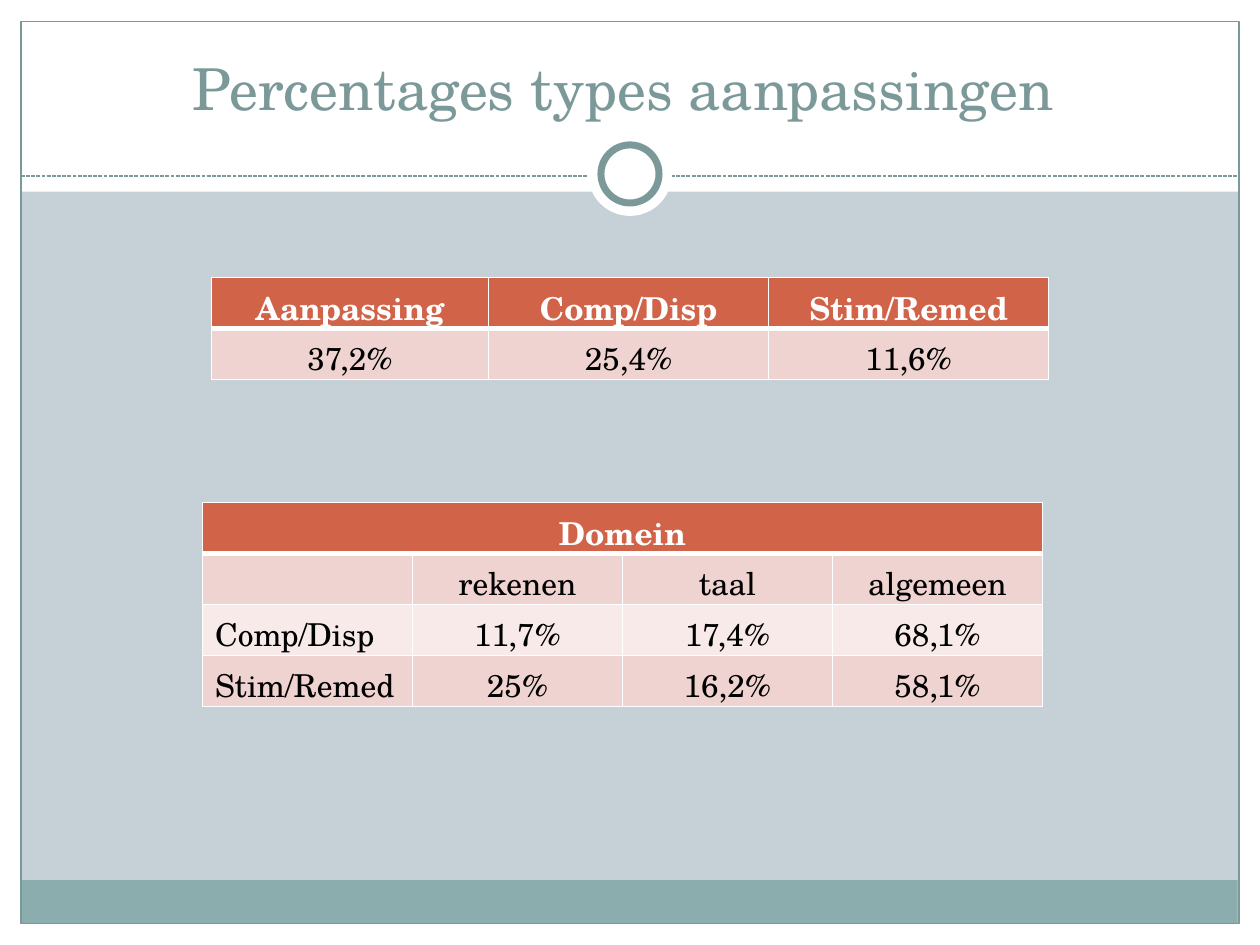
from lxml.etree import SubElement
from pptx import Presentation
from pptx.dml.color import RGBColor
from pptx.enum.dml import MSO_LINE
from pptx.enum.shapes import MSO_CONNECTOR, MSO_SHAPE
from pptx.enum.text import MSO_ANCHOR, PP_ALIGN
from pptx.oxml.ns import qn
from pptx.util import Pt

HUES = {"white": "FFFFFF", "teal": "7C999A", "bar": "8CADAE", "back": "C5D1D7",
        "head": "D16349", "rose": "EED3D0", "pale": "F7EAE9", "black": "000000"}
RGB = {name: RGBColor.from_string(code) for name, code in HUES.items()}
FACE = "TeX Gyre Schola"
FONTS = {"title": {"name": FACE, "size": Pt(33), "bold": False},
         "head": {"name": FACE, "size": Pt(18), "bold": True},
         "body": {"name": FACE, "size": Pt(18), "bold": False}}


def put_text(para, text, kind, hue, align=PP_ALIGN.CENTER):
    para.alignment = align
    run = para.add_run()
    run.text = text
    for key, value in FONTS[kind].items():
        setattr(run.font, key, value)
    run.font.color.rgb = RGB[hue]


def put_table(left, top, widths, rows):
    size = len(rows), len(widths)
    high = 29.2
    table = slide.shapes.add_table(*size, Pt(left), Pt(top), Pt(sum(widths)),
                                   Pt(high * len(rows))).table
    table.first_row = table.horz_banding = False
    for col, width in zip(table.columns, widths):
        col.width = Pt(width)
    for r, row in enumerate(rows):
        table.rows[r].height = Pt(high)
        kind, ink = ("body", "black") if r else ("head", "white")
        hue = "head" if r == 0 else "rose" if r % 2 else "pale"
        for c in range(len(widths)):
            cell = table.cell(r, c)
            cell.vertical_anchor = MSO_ANCHOR.TOP
            # White rules, thick below the header
            props = cell._tc.get_or_add_tcPr()
            edges = {"L": 1, "R": 1, "T": 3 if r == 1 else 1, "B": 1 if r else 3}
            for edge, wide in edges.items():
                line = SubElement(props, qn("a:ln" + edge), w=str(Pt(wide)))
                fill = SubElement(line, qn("a:solidFill"))
                SubElement(fill, qn("a:srgbClr"), val=HUES["white"])
            cell.fill.solid()
            cell.fill.fore_color.rgb = RGB[hue]
            if c < len(row) and row[c]:
                side = PP_ALIGN.LEFT if r > 1 and c == 0 else PP_ALIGN.CENTER
                put_text(cell.text_frame.paragraphs[0], row[c], kind, ink, side)
    return table


deck = Presentation()
deck.slide_width, deck.slide_height = Pt(720), Pt(540)
slide = deck.slides.add_slide(deck.slide_layouts[6])
slide.background.fill.solid()
slide.background.fill.fore_color.rgb = RGB["back"]

# Margins, footer bar and frame
rect, oval = MSO_SHAPE.RECTANGLE, MSO_SHAPE.OVAL
parts = [(rect, (0, 528, 720, 12), "white", 0),
         (rect, (0, 0, 720, 109.5), "white", 0),
         (rect, (0, 0, 12, 540), "white", 0),
         (rect, (708, 0, 12, 540), "white", 0),
         (rect, (11.7, 503, 695.6, 24.5), "bar", 0),
         (rect, (12, 12.2, 696, 515.5), None, 0.75),
         (oval, (336, 75.4, 48, 48), "white", 0),
         (oval, (343.4, 82.8, 33.2, 33.2), "white", 4)]
for form, box, hue, wide in parts:
    # Dashed rule, under the ring
    if box[0] == 336:
        rule = slide.shapes.add_connector(MSO_CONNECTOR.STRAIGHT, Pt(12),
                                          Pt(100.6), Pt(708), Pt(100.6))
        rule.line.color.rgb = RGB["teal"]
        rule.line.width = Pt(0.75)
        rule.line.dash_style = MSO_LINE.SQUARE_DOT
        SubElement(rule._element.spPr, qn("a:effectLst"))
    shape = slide.shapes.add_shape(form, *map(Pt, box))
    shape.shadow.inherit = False
    if hue:
        shape.fill.solid()
        shape.fill.fore_color.rgb = RGB[hue]
    else:
        shape.fill.background()
    if wide:
        shape.line.color.rgb = RGB["teal"]
        shape.line.width = Pt(wide)
    else:
        shape.line.fill.background()

# Title
frame = slide.shapes.add_textbox(Pt(20), Pt(2), Pt(672), Pt(71.5)).text_frame
for key, value in {"word_wrap": True, "vertical_anchor": MSO_ANCHOR.BOTTOM}.items():
    setattr(frame, key, value)
put_text(frame.paragraphs[0], "Percentages types aanpassingen", "title", "teal")

# Tables
field = put_table(115.7, 287, [120] * 4, [
    ["Domein"],
    ["", "rekenen", "taal", "algemeen"],
    ["Comp/Disp", "11,7%", "17,4%", "68,1%"],
    ["Stim/Remed", "25%", "16,2%", "58,1%"]])
field.cell(0, 0).merge(field.cell(0, 3))
put_table(120.8, 158.6, [158.4, 160, 160], [
    ["Aanpassing", "Comp/Disp", "Stim/Remed"],
    ["37,2%", "25,4%", "11,6%"]])

deck.save("out.pptx")
